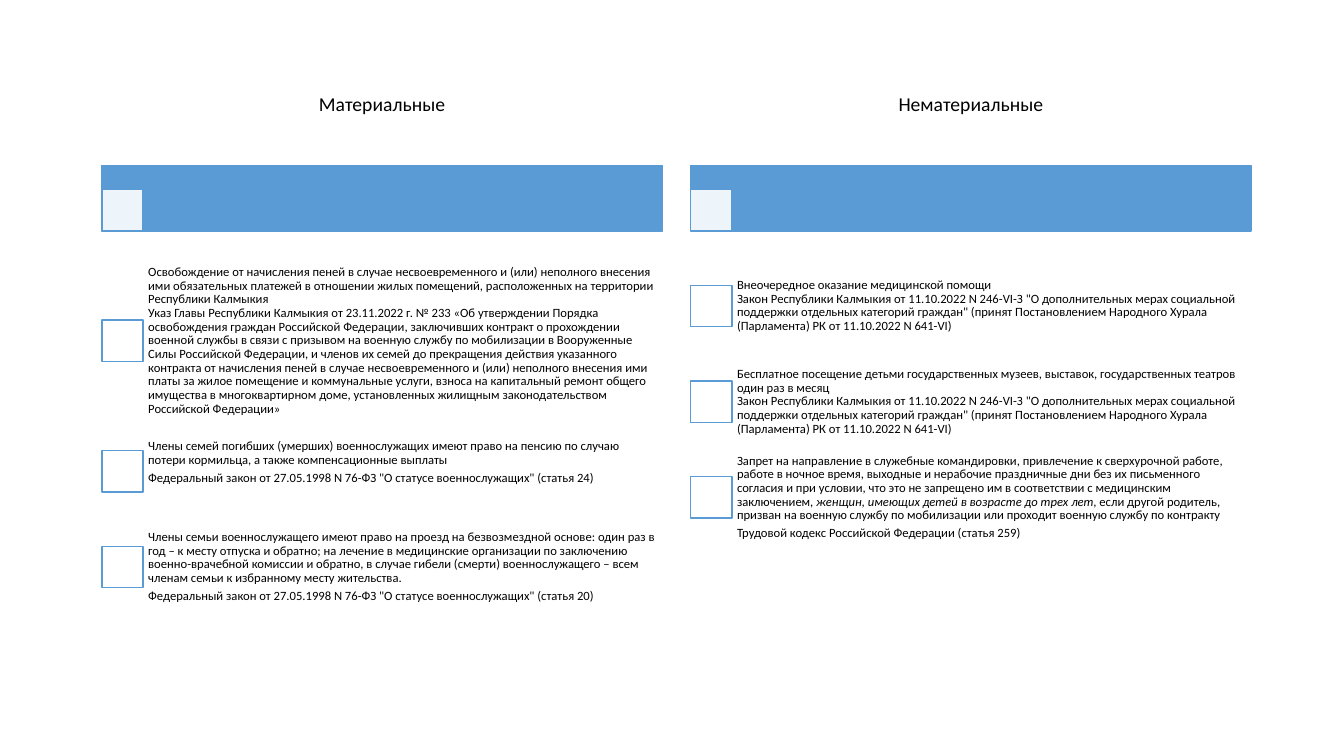
import pptx
import pptx.dml.color
import pptx.enum.shapes
import pptx.enum.text
import pptx.oxml
import pptx.oxml.ns
import pptx.util

COLORS = {"accent": "5B9BD5", "white": "FFFFFF", "text": "000000"}
FONT = "Calibri"

# Grid, in inches
SLIDE_WIDTH, SLIDE_HEIGHT = 13.33, 7.5
COLUMN_LEFT, COLUMN_WIDTH, COLUMN_PITCH = 1.01, 5.56, 5.84
HEADING_TOP, HEADING_HEIGHT = 0.46, 1.17
BAR_TOP, BAR_HEIGHT = 1.64, 0.65
ROWS_TOP, ROW_HEIGHT, TALL_ROW_HEIGHT = 2.56, 0.95, 1.64
CHECKBOX, TEXT_INDENT = 0.41, 0.39
TEXT_INSET, HEADING_INSETS = 0.07, (0.03, 0.02, 0.03, 0.02)
RAISED_INSETS = (TEXT_INSET, TEXT_INSET, TEXT_INSET, 0.25)
EVEN_INSETS = (TEXT_INSET,) * 4

REGIONAL_LAW = (
    'Закон Республики Калмыкия от 11.10.2022 N 246-VI-З "О дополнительных мерах '
    'социальной поддержки отдельных категорий граждан" (принят Постановлением '
    'Народного Хурала (Парламента) РК от 11.10.2022 N 641-VI)'
)
STATUS_LAW = 'Федеральный закон от 27.05.1998 N 76-ФЗ "О статусе военнослужащих" (статья {})'

# Each measure: row height, text insets, paragraphs (*...* marks italics)
MATERIAL = [
    (TALL_ROW_HEIGHT, EVEN_INSETS, [
        "Освобождение от начисления пеней в случае несвоевременного и (или) неполного "
        "внесения ими обязательных платежей в отношении жилых помещений, расположенных "
        "на территории Республики Калмыкия\n"
        "Указ Главы Республики Калмыкия от 23.11.2022 г. № 233 «Об утверждении Порядка "
        "освобождения граждан Российской Федерации, заключивших контракт о прохождении "
        "военной службы в связи с призывом на военную службу по мобилизации в "
        "Вооруженные Силы Российской Федерации, и членов их семей до прекращения "
        "действия указанного контракта от начисления пеней в случае несвоевременного и "
        "(или) неполного внесения ими платы за жилое помещение и коммунальные услуги, "
        "взноса на капитальный ремонт общего имущества в многоквартирном доме, "
        "установленных жилищным законодательством Российской Федерации»",
    ]),
    (ROW_HEIGHT, RAISED_INSETS, [
        "Члены семей погибших (умерших) военнослужащих имеют право на пенсию по случаю "
        "потери кормильца, а также компенсационные выплаты",
        STATUS_LAW.format(24),
    ]),
    (ROW_HEIGHT, EVEN_INSETS, [
        "Члены семьи военнослужащего имеют право на проезд на безвозмездной основе: один "
        "раз в год – к месту отпуска и обратно; на лечение в медицинские организации по "
        "заключению военно-врачебной комиссии и обратно, в случае гибели (смерти) "
        "военнослужащего – всем членам семьи к избранному месту жительства.",
        STATUS_LAW.format(20),
    ]),
]
NON_MATERIAL = [
    (ROW_HEIGHT, EVEN_INSETS, ["Внеочередное оказание медицинской помощи\n" + REGIONAL_LAW]),
    (ROW_HEIGHT, EVEN_INSETS, [
        "Бесплатное посещение детьми государственных музеев, выставок, государственных "
        "театров один раз в месяц\n" + REGIONAL_LAW,
    ]),
    (ROW_HEIGHT, EVEN_INSETS, [
        "Запрет на направление в служебные командировки, привлечение к сверхурочной "
        "работе, работе в ночное время, выходные и нерабочие праздничные дни без их "
        "письменного согласия и при условии, что это не запрещено им в соответствии с "
        "медицинским заключением, *женщин, имеющих детей в возрасте до трех лет*, если "
        "другой родитель, призван на военную службу по мобилизации или проходит военную "
        "службу по контракту",
        "Трудовой кодекс Российской Федерации (статья 259)",
    ]),
]
COLUMNS = [("Материальные", MATERIAL), ("Нематериальные", NON_MATERIAL)]


def color(name):
    return pptx.dml.color.RGBColor.from_string(COLORS[name])


def add_box(slide, left, top, width, height, fill, opacity=100):
    box = slide.shapes.add_shape(
        pptx.enum.shapes.MSO_SHAPE.RECTANGLE,
        *map(pptx.util.Inches, (left, top, width, height)))
    box.shadow.inherit = False
    box.fill.solid()
    box.fill.fore_color.rgb = color(fill)
    box.line.color.rgb = color("accent")
    box.line.width = pptx.util.Pt(1)
    if opacity < 100:
        fill_color = box.fill._xPr.find(".//" + pptx.oxml.ns.qn("a:srgbClr"))
        alpha = pptx.oxml.parse_xml(
            f'<a:alpha {pptx.oxml.ns.nsdecls("a")} val="{opacity * 1000}"/>')
        fill_color.append(alpha)


def add_text(slide, left, top, width, height, paragraphs, size, insets, align):
    frame = slide.shapes.add_textbox(
        *map(pptx.util.Inches, (left, top, width, height))).text_frame
    frame.word_wrap = True
    frame.vertical_anchor = pptx.enum.text.MSO_ANCHOR.MIDDLE
    (frame.margin_left, frame.margin_top,
     frame.margin_right, frame.margin_bottom) = map(pptx.util.Inches, insets)
    for index, text in enumerate(paragraphs):
        paragraph = frame.add_paragraph() if index else frame.paragraphs[0]
        paragraph.alignment = align
        paragraph.line_spacing = 0.9
        paragraph.space_after = pptx.util.Pt(round(size * 0.35, 2))
        paragraph.font.size = pptx.util.Pt(size)
        paragraph.font.name = FONT
        paragraph.font.color.rgb = color("text")
        opening, *pieces = text.split("*")
        paragraph.text = opening
        for position, piece in enumerate(pieces):
            run = paragraph.add_run()
            run.text = piece
            if position % 2 == 0:
                run.font.italic = True


def add_heading(slide, left, heading):
    add_box(slide, left, BAR_TOP, COLUMN_WIDTH, BAR_HEIGHT, "accent")
    add_box(slide, left, BAR_TOP + BAR_HEIGHT - CHECKBOX, CHECKBOX, CHECKBOX, "white", 90)
    add_text(slide, left, HEADING_TOP, COLUMN_WIDTH, HEADING_HEIGHT, [heading], 14,
             HEADING_INSETS, pptx.enum.text.PP_ALIGN.CENTER)


def add_measure(slide, left, top, height, insets, paragraphs):
    add_box(slide, left, top + (height - CHECKBOX) / 2, CHECKBOX, CHECKBOX, "white")
    add_text(slide, left + TEXT_INDENT, top, COLUMN_WIDTH - TEXT_INDENT, height,
             paragraphs, 9, insets, pptx.enum.text.PP_ALIGN.LEFT)


def main():
    presentation = pptx.Presentation()
    presentation.slide_width = pptx.util.Inches(SLIDE_WIDTH)
    presentation.slide_height = pptx.util.Inches(SLIDE_HEIGHT)
    slide = presentation.slides.add_slide(presentation.slide_layouts[6])
    for number, (heading, measures) in enumerate(COLUMNS):
        left = COLUMN_LEFT + number * COLUMN_PITCH
        add_heading(slide, left, heading)
        top = ROWS_TOP
        for height, insets, paragraphs in measures:
            add_measure(slide, left, top, height, insets, paragraphs)
            top += height
    presentation.save("out.pptx")


if __name__ == "__main__":
    main()
